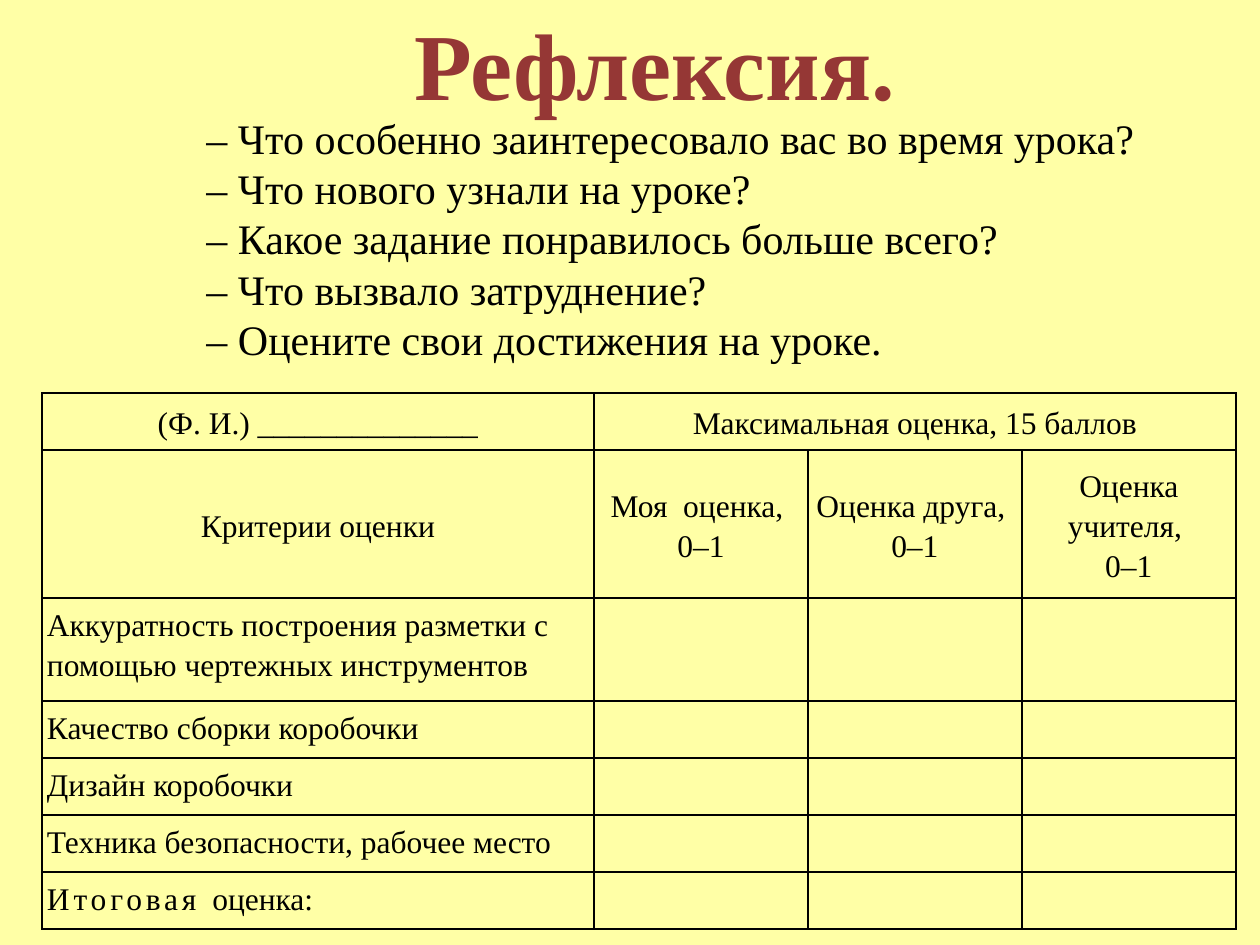
"""Build the lesson reflection slide with its questions and score table."""
from lxml import etree
from pptx import Presentation
from pptx.dml.color import RGBColor
from pptx.enum.text import MSO_ANCHOR, MSO_AUTO_SIZE, PP_ALIGN
from pptx.oxml.ns import qn
from pptx.util import Emu, Pt

CENTER, LEFT = PP_ALIGN.CENTER, PP_ALIGN.LEFT
MIDDLE, TOP = MSO_ANCHOR.MIDDLE, MSO_ANCHOR.TOP
GROW = MSO_AUTO_SIZE.SHAPE_TO_FIT_TEXT
PX = 914400 / 126

THEME = {
    "background": RGBColor(0xFF, 0xFF, 0xA6),
    "border": "000000",
    "title": {"name": "Times New Roman", "size": Pt(54), "bold": True,
              "color": RGBColor(0x95, 0x37, 0x35)},
    "question": {"name": "Times New Roman", "size": Pt(24), "color": RGBColor(0, 0, 0)},
    "table": {"name": "Times New Roman", "size": Pt(18), "color": RGBColor(0, 0, 0)},
}


def px(*lengths):
    return [Emu(round(length * PX)) for length in lengths]


def style(font, role):
    for attribute, value in THEME[role].items():
        if attribute == "color":
            font.color.rgb = value
        else:
            setattr(font, attribute, value)


prs = Presentation()
prs.slide_width, prs.slide_height = px(1260, 945)
slide = prs.slides.add_slide(prs.slide_layouts[6])
slide.background.fill.solid()
slide.background.fill.fore_color.rgb = THEME["background"]

QUESTIONS = [
    "– Что особенно заинтересовало вас во время урока?",
    "– Что нового узнали на уроке?",
    "– Какое задание понравилось больше всего?",
    "– Что вызвало затруднение?",
    "– Оцените свои достижения на уроке.",
]
TEXTS = [
    ("title", (402, 0, 536, 127), False, ["Рефлексия."]),
    ("question", (194, 106, 992, 267), True, QUESTIONS),
]
for role, box, wraps, lines in TEXTS:
    frame = slide.shapes.add_textbox(*px(*box)).text_frame
    frame.word_wrap = wraps
    frame.auto_size = GROW
    frame.text = "\n".join(lines)
    for paragraph in frame.paragraphs:
        style(paragraph.runs[0].font, role)

COLUMN_WIDTHS = [552] + [214] * 3
ROW_HEIGHTS = [57, 148, 103] + [57] * 4
HEADER_ROWS = 2
ROWS = [
    ["(Ф. И.) ______________", "Максимальная оценка, 15 баллов"],
    ["Критерии оценки", "Моя  оценка, \n0–1", "Оценка друга, \n0–1", "Оценка учителя, \n0–1"],
    ["Аккуратность построения разметки с помощью чертежных инструментов"],
    ["Качество сборки коробочки"],
    ["Дизайн коробочки"],
    ["Техника безопасности, рабочее место"],
    ["Итоговая "],
]
scores = slide.shapes.add_table(
    len(ROWS), len(COLUMN_WIDTHS), *px(42, 393, sum(COLUMN_WIDTHS), sum(ROW_HEIGHTS))
).table
scores.first_row = scores.horz_banding = False
for column, width in zip(scores.columns, px(*COLUMN_WIDTHS)):
    column.width = width
for row, height in zip(scores.rows, px(*ROW_HEIGHTS)):
    row.height = height
scores.cell(0, 1).merge(scores.cell(0, 3))

for r, row in enumerate(scores.rows):
    is_header = r < HEADER_ROWS
    for c, cell in enumerate(row.cells):
        cell_format = {"vertical_anchor": MIDDLE if is_header else TOP}
        for side in ("left", "right", "top", "bottom"):
            cell_format["margin_" + side] = px(5)[0]
        for attribute, value in cell_format.items():
            setattr(cell, attribute, value)
        properties = cell._tc.get_or_add_tcPr()
        for side in ("lnL", "lnR", "lnT", "lnB"):
            border = etree.SubElement(properties, qn("a:" + side), w=str(Pt(1)))
            border_fill = etree.SubElement(border, qn("a:solidFill"))
            etree.SubElement(border_fill, qn("a:srgbClr"), val=THEME["border"])
        cell.fill.background()
        if c < len(ROWS[r]):
            paragraph = cell.text_frame.paragraphs[0]
            paragraph.text = ROWS[r][c]
            paragraph.alignment = CENTER if is_header else LEFT
            paragraph.line_spacing = 1.15
            for run in paragraph.runs:
                style(run.font, "table")

total = scores.cell(len(ROWS) - 1, 0).text_frame.paragraphs[0]
total.runs[0]._r.get_or_add_rPr().set("spc", "220")
total_ending = total.add_run()
total_ending.text = "оценка:"
style(total_ending.font, "table")

prs.save("out.pptx")
